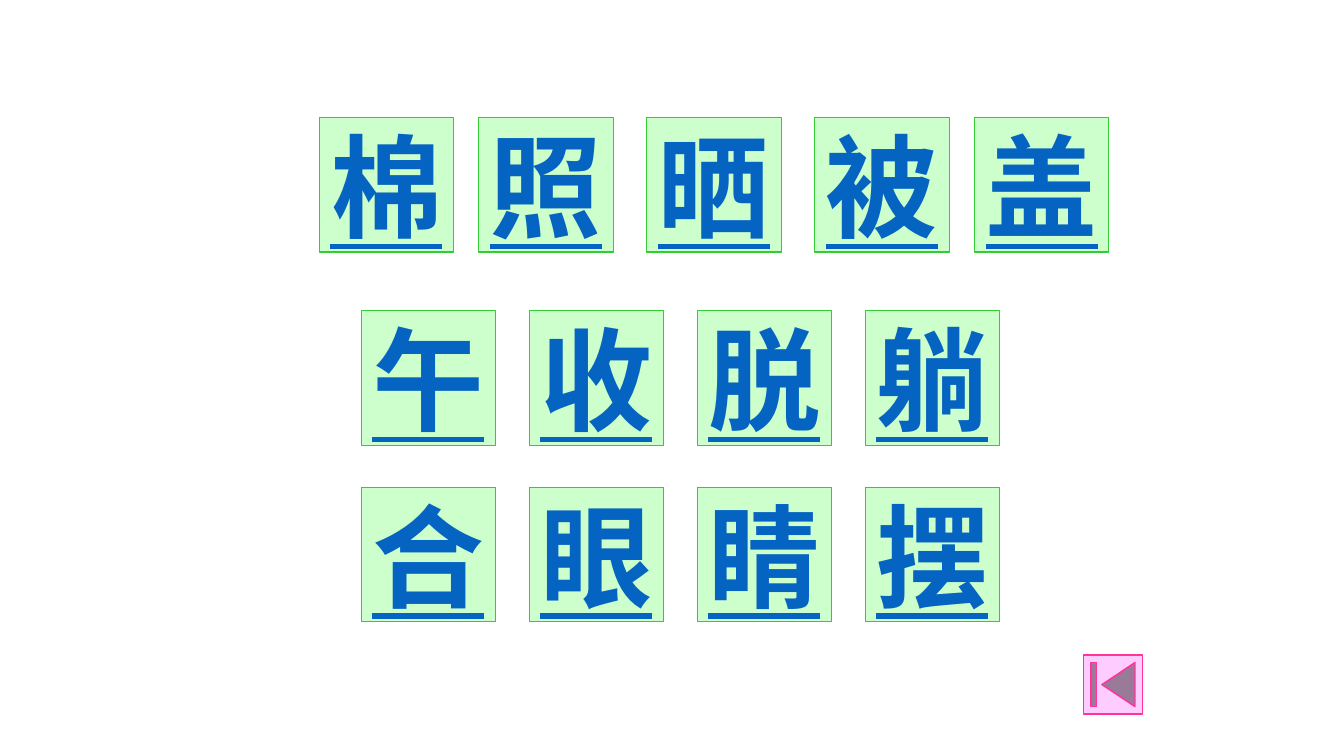
from dataclasses import dataclass

from pptx import Presentation
from pptx.dml.color import RGBColor
from pptx.enum import shapes, text
from pptx.util import Pt


@dataclass(frozen=True)
class Theme:
    tile: str = "CCFFCC"
    edge: str = "33CC33"
    ink: str = "0563C1"
    back: str = "FFCCFF"
    rim: str = "FF3399"
    font: str = "Times New Roman"
    size: int = 80


THEME = Theme()
SIDE = 96
STEP = 120
LEFTS = [258 + STEP * i for i in range(4)]
ROWS = [
    ("棉照晒被盖", 84, [228, 342, 462, 582, 696]),
    ("午收脱躺", 222, LEFTS),
    ("合眼睛摆", 348, LEFTS),
]


def add_button(slide, kind, left, top, side, fill, line, width):
    button = slide.shapes.add_shape(kind, Pt(left), Pt(top), Pt(side), Pt(side))
    button.shadow.inherit = False
    button.fill.solid()
    button.fill.fore_color.rgb = RGBColor.from_string(fill)
    button.line.color.rgb = RGBColor.from_string(line)
    button.line.width = Pt(width)
    return button


def add_tile(slide, char, left, top):
    """Add a green square button with one underlined character."""
    tile = add_button(slide, shapes.MSO_SHAPE.ACTION_BUTTON_CUSTOM,
                      left, top, SIDE, THEME.tile, THEME.edge, 0.75)
    frame = tile.text_frame
    frame.word_wrap = False
    frame.vertical_anchor = text.MSO_ANCHOR.MIDDLE
    para = frame.paragraphs[0]
    para.text = char
    para.alignment = text.PP_ALIGN.CENTER
    font = para.font
    font.name = THEME.font
    font.size = Pt(THEME.size)
    font.bold = True
    font.underline = True
    font.color.rgb = RGBColor.from_string(THEME.ink)


def main():
    deck = Presentation()
    deck.slide_width, deck.slide_height = Pt(960), Pt(540)
    slide = deck.slides.add_slide(deck.slide_layouts[6])
    for chars, top, lefts in ROWS:
        for char, left in zip(chars, lefts):
            add_tile(slide, char, left, top)
    add_button(slide, shapes.MSO_SHAPE.ACTION_BUTTON_BEGINNING,
               774, 468, 42, THEME.back, THEME.rim, 1)
    deck.save("out.pptx")


if __name__ == "__main__":
    main()
